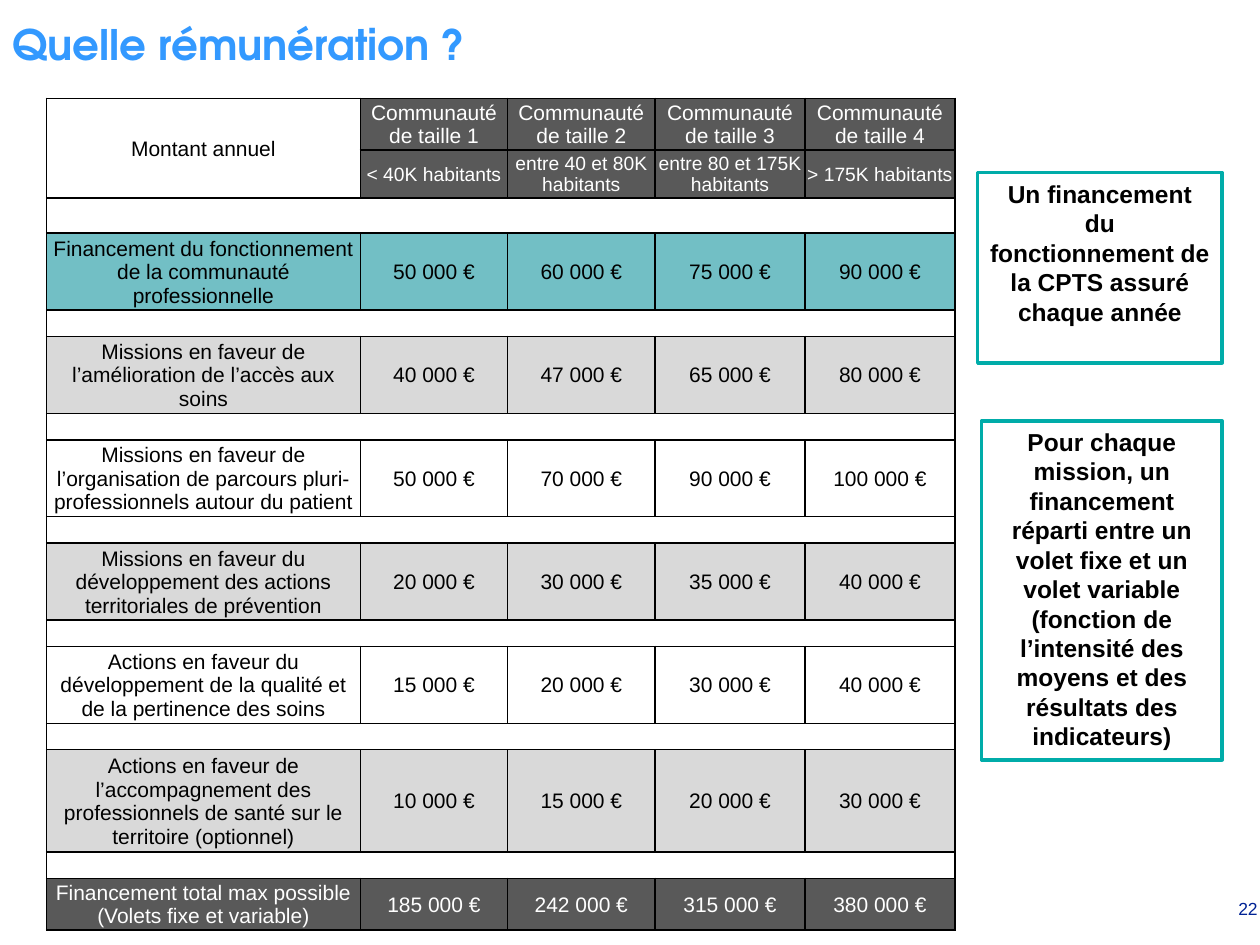
from lxml.etree import SubElement
from pptx import Presentation
from pptx.dml.color import RGBColor
from pptx.enum.shapes import MSO_SHAPE
from pptx.enum.text import MSO_ANCHOR, PP_ALIGN
from pptx.oxml.ns import qn
from pptx.util import Inches, Pt

INK = {"black": "000000", "white": "FFFFFF", "dark": "595959", "grey": "D9D9D9",
       "aqua": "72BFC5", "teal": "00ACA9", "blue": "3399FF", "navy": "002395"}

TITLE = "Quelle rémunération ?"
PAGE = "22"
CORNER = "Montant annuel"
SIZES = [f"Communauté de taille {n}" for n in range(1, 5)]
RANGES = ["< 40K habitants", "entre 40 et 80K habitants",
          "entre 80 et 175K habitants", "> 175K habitants"]
# label, thousands of euros for each size, fill, row height
GRANTS = [
    ("Financement du fonctionnement de la communauté professionnelle",
     (50, 60, 75, 90), "aqua", 0.61),
    ("Missions en faveur de l’amélioration de l’accès aux soins",
     (40, 47, 65, 80), "grey", 0.61),
    ("Missions en faveur de l’organisation de parcours pluri-professionnels autour du patient",
     (50, 70, 90, 100), None, 0.61),
    ("Missions en faveur du développement des actions territoriales de prévention",
     (20, 30, 35, 40), "grey", 0.61),
    ("Actions en faveur du développement de la qualité et de la pertinence des soins",
     (15, 20, 30, 40), None, 0.61),
    ("Actions en faveur de l’accompagnement des professionnels de santé sur le territoire (optionnel)",
     (10, 15, 20, 30), "grey", 0.81),
    ("Financement total max possible (Volets fixe et variable)",
     (185, 242, 315, 380), "dark", 0.41),
]
NOTES = [
    ("Pour chaque mission, un financement réparti entre un volet fixe et un volet "
     "variable (fonction de l’intensité des moyens et des résultats des indicateurs)",
     (7.79, 3.34, 1.91, 2.69)),
    ("Un financement du fonctionnement de la CPTS assuré chaque année",
     (7.76, 1.37, 1.94, 1.51)),
]
COLS = [2.49, 1.17, 1.17, 1.19, 1.19]
HEADS = [0.41, 0.38]
GAPS = [0.28] + [0.21] * (len(GRANTS) - 1)


def tint(name):
    return RGBColor.from_string(INK[name])


def write(frame, text, size=12, color="black", font="Arial", bold=False,
          align=PP_ALIGN.CENTER):
    frame.word_wrap = True
    para = frame.paragraphs[0]
    para.alignment = align
    run = para.add_run()
    run.text = text
    run.font.name, run.font.size, run.font.bold = font, Pt(size), bold
    run.font.color.rgb = tint(color)


def dress(cell, fill, sides="LRTB"):
    """Give a cell its margins, borders and fill."""
    cell.margin_left = cell.margin_right = cell.margin_top = Inches(0.01)
    cell.margin_bottom = 0
    cell.vertical_anchor = MSO_ANCHOR.MIDDLE
    props = cell._tc.get_or_add_tcPr()
    for side in "LRTB":
        shown = side in sides
        line = SubElement(props, qn(f"a:ln{side}"), w=str(Pt(1 if shown else 0)))
        paint = SubElement(line, qn("a:solidFill" if shown else "a:noFill"))
        if shown:
            SubElement(paint, qn("a:srgbClr"), val=INK["black"])
    if fill:
        cell.fill.solid()
        cell.fill.fore_color.rgb = tint(fill)
    else:
        cell.fill.background()


def fill_row(table, row, texts, fill, size=12):
    color = "white" if fill == "dark" else "black"
    for col, text in texts:
        cell = table.cell(row, col)
        dress(cell, fill)
        write(cell.text_frame, text, size=size, color=color)


def clear_row(table, row):
    """Make a blank spacer row with an outer frame only."""
    last = len(COLS) - 1
    for col in range(len(COLS)):
        cell = table.cell(row, col)
        dress(cell, None, "TB" + "L" * (col == 0) + "R" * (col == last))
        cell.text_frame.paragraphs[0]._p.get_or_add_endParaRPr().set("sz", "800")


def add_grid(slide):
    highs = HEADS + [h for gap, grant in zip(GAPS, GRANTS) for h in (gap, grant[3])]
    shape = slide.shapes.add_table(len(highs), len(COLS), Inches(0.37), Inches(0.78),
                                   Inches(sum(COLS)), Inches(sum(highs)))
    table = shape.table
    table.first_row = table.horz_banding = False
    for col, wide in zip(table.columns, COLS):
        col.width = Inches(wide)
    for row, high in zip(table.rows, highs):
        row.height = Inches(high)

    table.cell(0, 0).merge(table.cell(1, 0))
    fill_row(table, 0, [(0, CORNER)], "white")
    dress(table.cell(1, 0), "white")
    fill_row(table, 0, enumerate(SIZES, 1), "dark")
    fill_row(table, 1, enumerate(RANGES, 1), "dark", size=11)
    for n, (label, sums, fill, _) in enumerate(GRANTS):
        row = len(HEADS) + 2 * n
        clear_row(table, row)
        texts = [label] + [f"{k} 000 €" for k in sums]
        fill_row(table, row + 1, enumerate(texts), fill)


def add_note(slide, text, box):
    shape = slide.shapes.add_shape(MSO_SHAPE.RECTANGLE, *map(Inches, box))
    shape.shadow.inherit = False
    shape.fill.solid()
    shape.fill.fore_color.rgb = tint("white")
    shape.line.color.rgb = tint("teal")
    shape.line.width = Pt(2)
    frame = shape.text_frame
    frame.vertical_anchor = MSO_ANCHOR.TOP
    frame.margin_left = frame.margin_right = Pt(7)
    write(frame, text, size=14, bold=True)


def add_text(slide, text, box, anchor=MSO_ANCHOR.TOP, **style):
    frame = slide.shapes.add_textbox(*map(Inches, box)).text_frame
    frame.vertical_anchor = anchor
    write(frame, text, **style)


def main():
    deck = Presentation()
    deck.slide_width, deck.slide_height = Inches(10), Inches(7.5)
    slide = deck.slides.add_slide(deck.slide_layouts[6])
    add_text(slide, PAGE, (9.58, 7.08, 0.5, 0.5), size=10, color="navy",
             align=PP_ALIGN.RIGHT)
    add_text(slide, TITLE, (0, 0.09, 10, 0.51), anchor=MSO_ANCHOR.MIDDLE, size=24,
             color="blue", font="TeX Gyre Adventor", bold=True, align=PP_ALIGN.LEFT)
    add_grid(slide)
    for text, box in NOTES:
        add_note(slide, text, box)
    deck.save("out.pptx")


if __name__ == "__main__":
    main()
